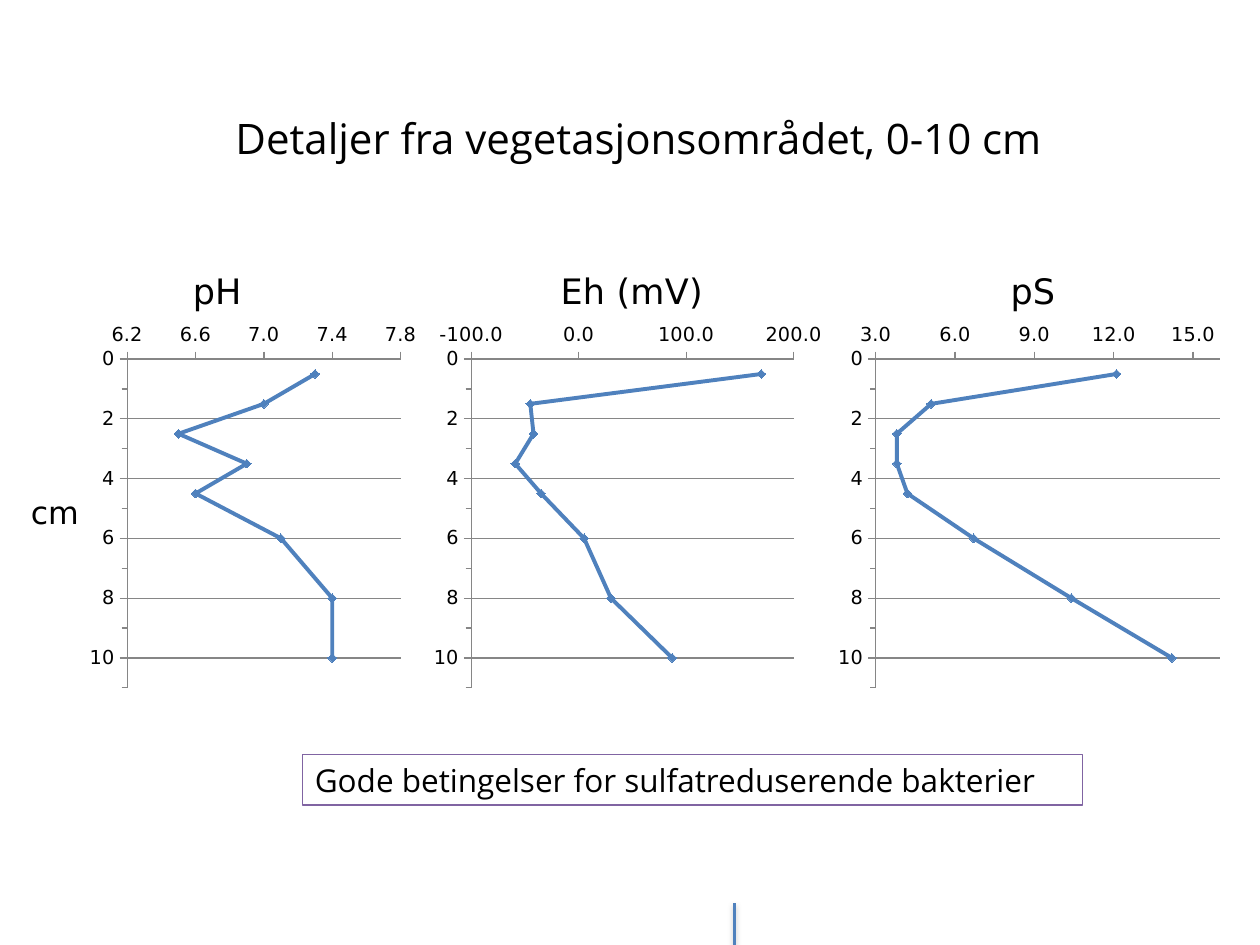
from lxml import etree
from pptx import Presentation
from pptx.chart.data import XyChartData
from pptx.dml.color import RGBColor
from pptx.enum.chart import XL_AXIS_CROSSES as Crosses
from pptx.enum.chart import XL_CHART_TYPE as ChartType
from pptx.enum.chart import XL_MARKER_STYLE as Marker
from pptx.enum.chart import XL_TICK_MARK as TickMark
from pptx.enum.shapes import MSO_CONNECTOR as Connector
from pptx.enum.text import MSO_AUTO_SIZE as AutoSize
from pptx.oxml import parse_xml
from pptx.oxml.ns import nsdecls, qn
from pptx.util import Inches, Pt

COLORS = {
    "text": "000000",
    "curve": "4F81BD",
    "axis": "868686",
    "frame": "8064A2",
    "shadow": "808080",
}
CHART_FONT = "DejaVu Sans"
TEXT_FONT = "Open Sans"
DEPTHS = [0.5, 1.5, 2.5, 3.5, 4.5, 6, 8, 10]
CHART_TOP, CHART_HEIGHT = 1.88, 3.65
PLOT_TOP, PLOT_HEIGHT = 2.85, 2.61
TITLE_TOP = 2.07

PROFILES = [
    {"title": "pH", "name": "pH", "left": 0, "width": 3.38,
     "plot": (1.01, 2.17), "title_left": 1.48, "scale": (6.2, 7.8, 0.4),
     "values": [7.3, 7, 6.5, 6.9, 6.6, 7.1, 7.4, 7.4]},
    {"title": "Eh (mV)", "name": "Series 1", "left": 3.38, "width": 3.21,
     "plot": (3.74, 2.56), "title_left": 4.4, "scale": (-100, 200, 100),
     "values": [170, -45, -42, -59, -35, 5, 30, 87]},
    {"title": "pS", "name": "pS", "left": 6.59, "width": 3.15,
     "plot": (6.95, 2.73), "title_left": 7.97, "scale": (3, 16, 3),
     "values": [12.1, 5.1, 3.8, 3.8, 4.2, 6.7, 10.4, 14.2]},
]


def color(name):
    return RGBColor.from_string(COLORS[name])


def style_font(font, name, size):
    font.name = name
    font.size = Pt(size)
    font.bold = False
    font.color.rgb = color("text")


def style_line(line, name, width):
    line.color.rgb = color(name)
    line.width = Pt(width)


def add_text(slide, text, size, left, top, width, height, frame=None):
    shape = slide.shapes.add_textbox(
        Inches(left), Inches(top), Inches(width), Inches(height))
    text_frame = shape.text_frame
    text_frame.word_wrap = False
    text_frame.auto_size = AutoSize.SHAPE_TO_FIT_TEXT
    run = text_frame.paragraphs[0].add_run()
    run.text = text
    style_font(run.font, TEXT_FONT, size)
    if frame:
        style_line(shape.line, frame, 0.75)


def set_layout(element, profile, left, top, size=None, index=1):
    for old in element.findall(qn("c:layout")):
        element.remove(old)
    layout = parse_xml(f"<c:layout {nsdecls('c')}><c:manualLayout/></c:layout>")
    fields = [("xMode", "edge"), ("yMode", "edge"),
              ("x", (left - profile["left"]) / profile["width"]),
              ("y", (top - CHART_TOP) / CHART_HEIGHT)]
    if size:
        fields.insert(0, ("layoutTarget", "inner"))
        fields += [("w", size[0] / profile["width"]),
                   ("h", size[1] / CHART_HEIGHT)]
    for tag, value in fields:
        etree.SubElement(layout[0], qn(f"c:{tag}")).set("val", str(value))
    element.insert(index, layout)


def set_title(title, text, size, profile, left, top):
    run = title.text_frame.paragraphs[0].add_run()
    run.text = text
    style_font(run.font, CHART_FONT, size)
    set_layout(title.element, profile, left, top)


def style_axis(axis, scale, number_format):
    axis.minimum_scale, axis.maximum_scale, axis.major_unit = scale
    axis.major_tick_mark = TickMark.OUTSIDE
    axis.minor_tick_mark = TickMark.NONE
    axis.has_major_gridlines = False
    axis.crosses = Crosses.MINIMUM
    axis.tick_labels.number_format = number_format
    axis.tick_labels.number_format_is_linked = False
    style_font(axis.tick_labels.font, CHART_FONT, 11)
    style_line(axis.format.line, "axis", 0.75)


def add_profile(slide, profile):
    data = XyChartData()
    points = data.add_series(profile["name"])
    for value, depth in zip(profile["values"], DEPTHS):
        points.add_data_point(value, depth)
    chart = slide.shapes.add_chart(
        ChartType.XY_SCATTER_SMOOTH, Inches(profile["left"]), Inches(CHART_TOP),
        Inches(profile["width"]), Inches(CHART_HEIGHT), data).chart
    chart.has_legend = False
    style_font(chart.font, CHART_FONT, 11)
    chart.has_title = True
    set_title(chart.chart_title, profile["title"], 20, profile,
              profile["title_left"], TITLE_TOP)

    style_axis(chart.category_axis, profile["scale"], "#,##0.0")
    depth_axis = chart.value_axis
    style_axis(depth_axis, (0, 11, 2), "General")
    depth_axis.reverse_order = True
    depth_axis.minor_unit = 1
    depth_axis.minor_tick_mark = TickMark.OUTSIDE
    depth_axis.has_major_gridlines = True
    style_line(depth_axis.major_gridlines.format.line, "axis", 0.75)

    plot = chart.plots[0]
    plot.vary_by_categories = False
    series = plot.series[0]
    series.smooth = True
    style_line(series.format.line, "curve", 2.25)
    series.marker.style = Marker.DIAMOND
    series.marker.size = 5
    series.marker.format.fill.solid()
    series.marker.format.fill.fore_color.rgb = color("curve")
    style_line(series.marker.format.line, "curve", 0.75)

    left, width = profile["plot"]
    set_layout(chart.element.find(".//" + qn("c:plotArea")), profile,
               left, PLOT_TOP, (width, PLOT_HEIGHT), 0)
    return chart


def add_depth_title(chart, profile):
    title = chart.value_axis.axis_title
    set_title(title, "cm", 18, profile, 0.2, 3.86)
    body = title.element.find(".//" + qn("a:bodyPr"))
    body.set("rot", "0")
    body.set("vert", "horz")


def add_footer_line(slide):
    line = slide.shapes.add_connector(
        Connector.STRAIGHT, Inches(5.83), Inches(7.17), Inches(5.83), Inches(7.5))
    style_line(line.line, "curve", 2)
    line.element.spPr.append(parse_xml(
        f'<a:effectLst {nsdecls("a")}>'
        f'<a:outerShdw blurRad="{Pt(3.1)}" dist="{Pt(1.6)}" dir="5400000" rotWithShape="0">'
        f'<a:srgbClr val="{COLORS["shadow"]}"><a:alpha val="38000"/></a:srgbClr>'
        '</a:outerShdw></a:effectLst>'))


def main():
    presentation = Presentation()
    presentation.slide_width = Inches(10)
    presentation.slide_height = Inches(7.5)
    slide = presentation.slides.add_slide(presentation.slide_layouts[6])
    add_footer_line(slide)
    charts = [add_profile(slide, profile) for profile in PROFILES]
    add_depth_title(charts[0], PROFILES[0])
    add_text(slide, "Detaljer fra vegetasjonsområdet, 0-10 cm", 24,
             1.77, 0.84, 7.08, 0.5)
    add_text(slide, "Gode betingelser for sulfatreduserende bakterier", 18,
             2.4, 5.99, 6.19, 0.4, "frame")
    presentation.save("out.pptx")


if __name__ == "__main__":
    main()
